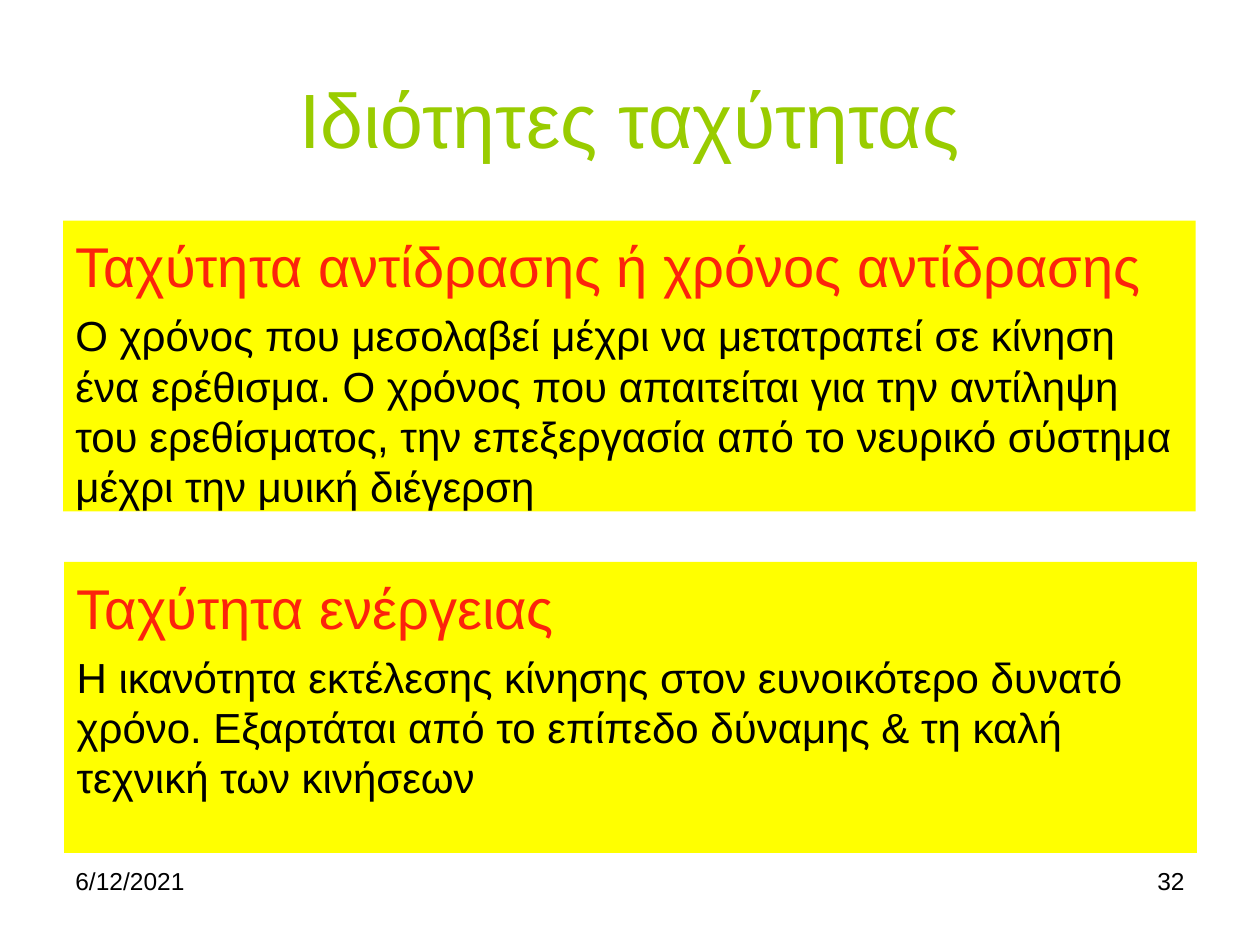
from pptx import Presentation, util as u
from pptx.dml.color import RGBColor
from pptx.enum import shapes, text

hues = {"title": "99CC00", "panel": "FFFF00", "head": "FC230C", "body": "000000"}
deck = Presentation()
deck.slide_width, deck.slide_height = u.Inches(10), u.Inches(7.5)
wide, high = deck.slide_width, deck.slide_height
slide = deck.slides.add_slide(deck.slide_layouts[6])
left, mid, right = text.PP_ALIGN.LEFT, text.PP_ALIGN.CENTER, text.PP_ALIGN.RIGHT
top, center = text.MSO_ANCHOR.TOP, text.MSO_ANCHOR.MIDDLE


def place(x, y, w, h):
    return [int(x * wide), int(y * high), int(w * wide), int(h * high)]


def write(frame, lines, align=left, anchor=top, inset=0.05):
    form = {"word_wrap": True, "vertical_anchor": anchor, "margin_top": u.Inches(inset)}
    for key, val in form.items():
        setattr(frame, key, val)
    for i, (words, size, hue) in enumerate(lines):
        para = frame.add_paragraph() if i else frame.paragraphs[0]
        para.alignment = align
        para.space_before = u.Pt(6 if i else 0)
        run = para.add_run()
        run.text = words
        for key, val in {"name": "Arial", "size": u.Pt(size)}.items():
            setattr(run.font, key, val)
        run.font.color.rgb = RGBColor.from_string(hues[hue])


labels = [
    ("6/12/2021", 14, "body", (0.05, 0.91, 0.23, 0.07), left, top),
    ("32", 14, "body", (0.72, 0.91, 0.23, 0.07), right, top),
    ("Ιδιότητες ταχύτητας", 44, "title", (0.05, 0.04, 0.9, 0.17), mid, center),
]
for words, size, hue, area, align, anchor in labels:
    box = slide.shapes.add_textbox(*place(*area))
    write(box.text_frame, [(words, size, hue)], align, anchor)

panels = [
    ("Ταχύτητα αντίδρασης ή χρόνος αντίδρασης",
     "Ο χρόνος που μεσολαβεί μέχρι να μετατραπεί σε κίνηση ένα ερέθισμα. "
     "Ο χρόνος που απαιτείται για την αντίληψη του ερεθίσματος, την επεξεργασία "
     "από το νευρικό σύστημα μέχρι την μυική διέγερση"),
    ("Ταχύτητα ενέργειας",
     "Η ικανότητα εκτέλεσης κίνησης στον ευνοικότερο δυνατό χρόνο. "
     "Εξαρτάται από το επίπεδο δύναμης & τη καλή τεχνική των κινήσεων"),
]
first, step = 1.75 / 7.5, 2.71 / 7.5
for row, (head, body) in enumerate(panels):
    area = place(0.05 + row * 0.001, first + row * step, 0.899, 2.31 / 7.5)
    panel = slide.shapes.add_shape(shapes.MSO_SHAPE.RECTANGLE, *area)
    panel.shadow.inherit = False
    panel.fill.solid()
    panel.fill.fore_color.rgb = RGBColor.from_string(hues["panel"])
    panel.line.fill.background()
    write(panel.text_frame, [(head, 32, "head"), (body, 24, "body")], inset=0.09)

deck.save("out.pptx")
